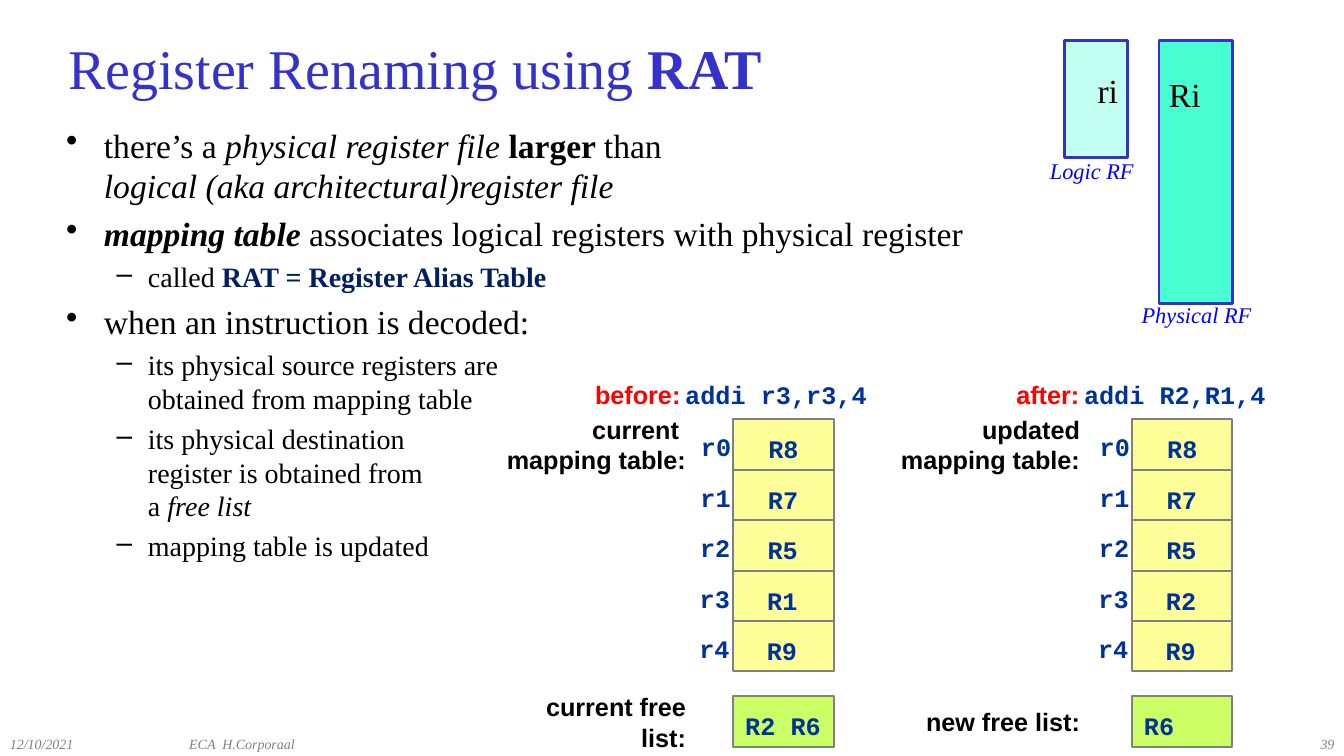
"""Build the slide on register renaming with a register alias table."""
from lxml import etree
from pptx import Presentation
from pptx.dml.color import RGBColor
from pptx.enum.shapes import MSO_SHAPE
from pptx.enum.text import MSO_ANCHOR, MSO_AUTO_SIZE, PP_ALIGN
from pptx.oxml.ns import qn
from pptx.util import Cm, Pt

RECT = MSO_SHAPE.RECTANGLE
LEFT, CENTER, RIGHT = PP_ALIGN.LEFT, PP_ALIGN.CENTER, PP_ALIGN.RIGHT
TOP, MIDDLE = MSO_ANCHOR.TOP, MSO_ANCHOR.MIDDLE
GROW = MSO_AUTO_SIZE.SHAPE_TO_FIT_TEXT

BLACK = RGBColor(0x00, 0x00, 0x00)
GREY = RGBColor(0x80, 0x80, 0x80)
RED = RGBColor(0xFF, 0x00, 0x00)
BLUE = RGBColor(0x00, 0x00, 0xFF)
INDIGO = RGBColor(0x33, 0x33, 0xCC)
NAVY = RGBColor(0x00, 0x20, 0x60)
CODE_BLUE = RGBColor(0x00, 0x33, 0x99)
YELLOW = RGBColor(0xFF, 0xFF, 0x99)
LIME = RGBColor(0xCC, 0xFF, 0x66)
PALE_TEAL = RGBColor(0xC2, 0xFF, 0xF0)
TEAL = RGBColor(0x47, 0xFF, 0xD1)

SERIF = {"name": "Times New Roman"}
TITLE = SERIF | {"size": Pt(40), "color": INDIGO}
MAIN = SERIF | {"size": Pt(24), "color": BLACK}
SUB = MAIN | {"size": Pt(20)}
FOOTER = SERIF | {"size": Pt(10), "color": GREY, "italic": True}
CAPTION = SERIF | {"size": Pt(16), "color": BLUE, "italic": True}
LABEL = {"name": "Arial", "size": Pt(18), "color": BLACK, "bold": True}
STATE = LABEL | {"color": RED}
CODE = LABEL | {"name": "Courier New", "color": CODE_BLUE}
BOLD, ITALIC = {"bold": True}, {"italic": True}


def add_text(shapes, box, paragraphs, align=LEFT, anchor=TOP, wrap=False):
    tf = shapes.add_textbox(*map(Cm, box)).text_frame
    tf.word_wrap = wrap
    tf.vertical_anchor = anchor
    if not wrap:
        tf.auto_size = GROW
    for i, runs in enumerate(paragraphs):
        p = tf.paragraphs[0] if i == 0 else tf.add_paragraph()
        p.alignment = align
        for text, style in runs:
            for j, line in enumerate(text.split("\n")):
                if j:
                    p.add_line_break()
                if line:
                    r = p.add_run()
                    r.text = line
                    for key, value in style.items():
                        if key == "color":
                            r.font.color.rgb = value
                        else:
                            setattr(r.font, key, value)
    return tf


def add_box(shapes, box, fill, line, width):
    sp = shapes.add_shape(RECT, *map(Cm, box))
    sp.shadow.inherit = False
    sp.fill.solid()
    sp.fill.fore_color.rgb = fill
    sp.line.color.rgb = line
    sp.line.width = Pt(width)


prs = Presentation()
prs.slide_width, prs.slide_height = Cm(33.87), Cm(19.05)
s = prs.slides.add_slide(prs.slide_layouts[6])

add_text(s.shapes, (1.47, 0.63, 31.6, 2.11),
         [[("Register Renaming using ", TITLE), ("RAT", TITLE | BOLD)]],
         anchor=MIDDLE, wrap=True)

bullets = [
    (0, [("there’s a ", MAIN), ("physical register file ", MAIN | ITALIC),
         ("larger ", MAIN | BOLD), ("than \n", MAIN),
         ("logical (aka architectural)register file", MAIN | ITALIC)]),
    (0, [("mapping table", MAIN | BOLD | ITALIC),
         (" associates logical registers with physical register", MAIN)]),
    (1, [("called ", SUB),
         ("RAT = Register Alias Table", SUB | BOLD | {"color": NAVY})]),
    (0, [("when an instruction is decoded:", MAIN)]),
    (1, [("its physical source registers are \nobtained from mapping table", SUB)]),
    (1, [("its physical destination \nregister is obtained from \na ", SUB),
         ("free list", SUB | ITALIC)]),
    (1, [("mapping table is updated", SUB)]),
]
BULLET_STYLES = [("•", 0.95, -0.95, 5.5), ("–", 2.06, -0.79, 4.6)]
tf = add_text(s.shapes, (1.42, 3.02, 31.6, 15.01),
              [runs for level, runs in bullets], wrap=True)
for p, (level, runs) in zip(tf.paragraphs, bullets):
    char, margin, indent, space = BULLET_STYLES[level]
    p.level = level
    p.space_before = Pt(space)
    pPr = p._p.get_or_add_pPr()
    pPr.set("marL", str(Cm(margin)))
    pPr.set("indent", str(Cm(indent)))
    etree.SubElement(pPr, qn("a:buChar")).set("char", char)

for left, width, text, align in [(0, 4.52, "12/10/2021", LEFT),
                                 (4.52, 10.72, "ECA  H.Corporaal", LEFT),
                                 (26.82, 7.06, "39", RIGHT)]:
    add_text(s.shapes, (left, 18.42, width, 0.63), [[(text, FOOTER)]], align, wrap=True)

ROW = 1.27
TABLE_TOP = 10.57
tables = [
    {"left": 18.47, "state": "before:", "code": "addi r3,r3,4", "kind": "current ",
     "values": ["R8", "R7", "R5", "R1", "R9"], "list": "current free list:",
     "free": "R2 R6", "free_width": 2.41, "label_right": 17.54},
    {"left": 28.52, "state": "after:", "code": "addi R2,R1,4", "kind": "updated",
     "values": ["R8", "R7", "R5", "R2", "R9"], "list": "new free list:",
     "free": "R6", "free_width": 1.27, "label_right": 27.47},
]
for t in tables:
    shapes = s.shapes.add_group_shape().shapes
    left, label_right = t["left"], t["label_right"]
    for i, value in enumerate(t["values"]):
        top = TABLE_TOP + i * ROW
        add_box(shapes, (left, top, 2.54, ROW), YELLOW, GREY, 1.5)
        for text, dx, dy in [(value, 0.64, 0.23), (f"r{i}", -1.06, 0.18)]:
            add_text(shapes, (left + dx - 0.01 * i, top + dy, ROW, 1.02),
                     [[(text, CODE)]], CENTER, MIDDLE)
    add_box(shapes, (left, 17.55, 2.54, ROW), LIME, GREY, 1.5)
    add_text(shapes, (left + 0.06, 17.78, t["free_width"], 1.02),
             [[(t["free"], CODE)]], LEFT, MIDDLE)
    add_text(shapes, (left - 1.47, 9.42, 5.11, 1.02), [[(t["code"], CODE)]], CENTER, MIDDLE)
    for right, top, width, height, lines, style in [
            (left - 1.07, 9.42, 2.67, 1.02, [t["state"]], STATE),
            (label_right, 10.31, 5.03, 1.78, [t["kind"], "mapping table:"], LABEL),
            (label_right, 17.68, 5.33, 1.02, [t["list"]], LABEL)]:
        add_text(shapes, (right - width, top, width, height),
                 [[(line, style)] for line in lines], RIGHT, MIDDLE)

add_box(s.shapes, (26.82, 1.02, 1.6, 2.95), PALE_TEAL, INDIGO, 2)
add_box(s.shapes, (29.21, 1.02, 1.85, 6.63), TEAL, INDIGO, 2)
for box, text, style in [((27.41, 1.63, 1.04, 1.27), "ri", MAIN),
                         ((29.21, 1.75, 1.32, 1.27), "Ri", MAIN),
                         ((26.21, 3.84, 2.64, 0.94), "Logic RF", CAPTION),
                         ((28.52, 7.47, 3.33, 0.94), "Physical RF", CAPTION)]:
    add_text(s.shapes, box, [[(text, style)]])

prs.save("out.pptx")
